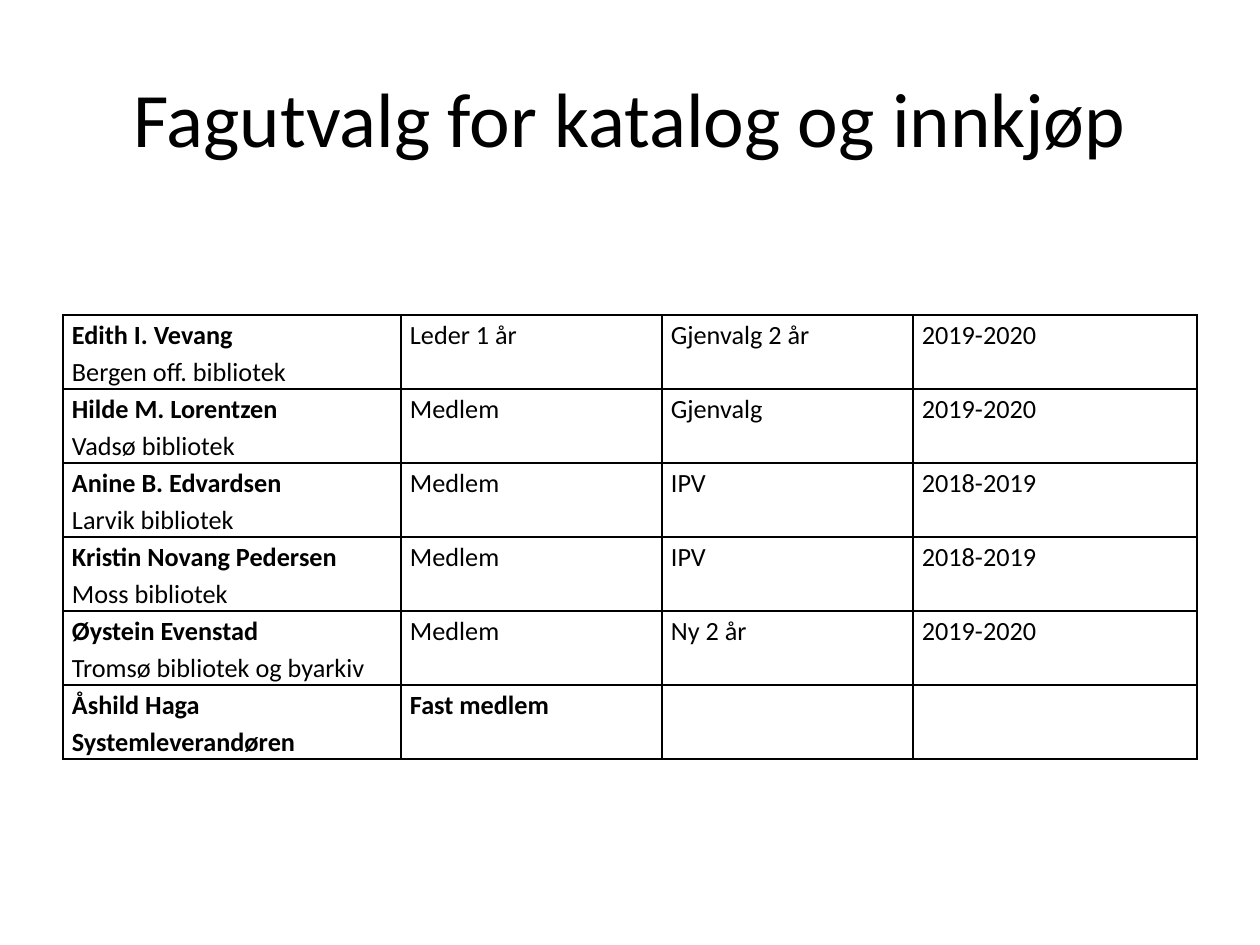
from pptx import Presentation
from pptx.dml.color import RGBColor
from pptx.enum.text import MSO_ANCHOR, PP_ALIGN
from pptx.oxml import parse_xml
from pptx.oxml.ns import nsdecls
from pptx.util import Emu, Pt

PX = 914400 // 126
FONT = "Calibri"
BLACK = "000000"

TITLE = "Fagutvalg for katalog og innkjøp"
# \v breaks a line, \n starts a paragraph
MEMBERS = [
    ("Edith I. Vevang\vBergen off. bibliotek", "Leder 1 år", "Gjenvalg 2 år", "2019-2020"),
    ("Hilde M. Lorentzen\vVadsø bibliotek", "Medlem", "Gjenvalg", "2019-2020"),
    ("Anine B. Edvardsen\vLarvik bibliotek", "Medlem", "IPV", "2018-2019"),
    ("Kristin Novang Pedersen\vMoss bibliotek", "Medlem", "IPV", "2018-2019"),
    ("Øystein Evenstad\vTromsø bibliotek og byarkiv", "Medlem", "Ny 2 år", "2019-2020"),
    ("Åshild Haga\nSystemleverandøren", "Fast medlem", "", ""),
]
COLUMN_WIDTHS = (338, 261, 251, 284)
ROW_HEIGHT = 74


def px(value):
    return Emu(value * PX)


def color(value):
    return RGBColor.from_string(value)


def style(font, size, bold=False):
    font.name, font.size, font.bold = FONT, Pt(size), bold
    font.color.rgb = color(BLACK)


def add_borders(cell):
    properties = cell._tc.get_or_add_tcPr()
    for position, side in enumerate(("lnL", "lnR", "lnT", "lnB")):
        properties.insert(position, parse_xml(
            f'<a:{side} {nsdecls("a")} w="{Pt(1)}"><a:solidFill>'
            f'<a:srgbClr val="{BLACK}"/></a:solidFill></a:{side}>'))


def fill_cell(cell, text, all_bold):
    cell.fill.background()
    cell.margin_left = cell.margin_right = px(9)
    cell.margin_top = cell.margin_bottom = 0
    cell.text = text
    for paragraph in cell.text_frame.paragraphs:
        paragraph.line_spacing = 1.15
        style(paragraph.font, 15, all_bold)
        if "\v" in text:
            paragraph.runs[0].font.bold = True
    add_borders(cell)


prs = Presentation()
prs.slide_width, prs.slide_height = px(1260), px(945)
slide = prs.slides.add_slide(prs.slide_layouts[6])

# Title
title = slide.shapes.add_textbox(px(63), px(38), px(1134), px(157)).text_frame
title.word_wrap = True
title.vertical_anchor = MSO_ANCHOR.MIDDLE
title.text = TITLE
title.paragraphs[0].alignment = PP_ALIGN.CENTER
style(title.paragraphs[0].font, 44)

# Committee table
committee = slide.shapes.add_table(
    len(MEMBERS), len(COLUMN_WIDTHS), px(63), px(315),
    px(sum(COLUMN_WIDTHS)), px(ROW_HEIGHT * len(MEMBERS))).table
committee.first_row = committee.horz_banding = False
for column, width in zip(committee.columns, COLUMN_WIDTHS):
    column.width = px(width)
for r, member in enumerate(MEMBERS):
    committee.rows[r].height = px(ROW_HEIGHT)
    for c, text in enumerate(member):
        fill_cell(committee.cell(r, c), text, all_bold=member is MEMBERS[-1])

prs.save("out.pptx")
